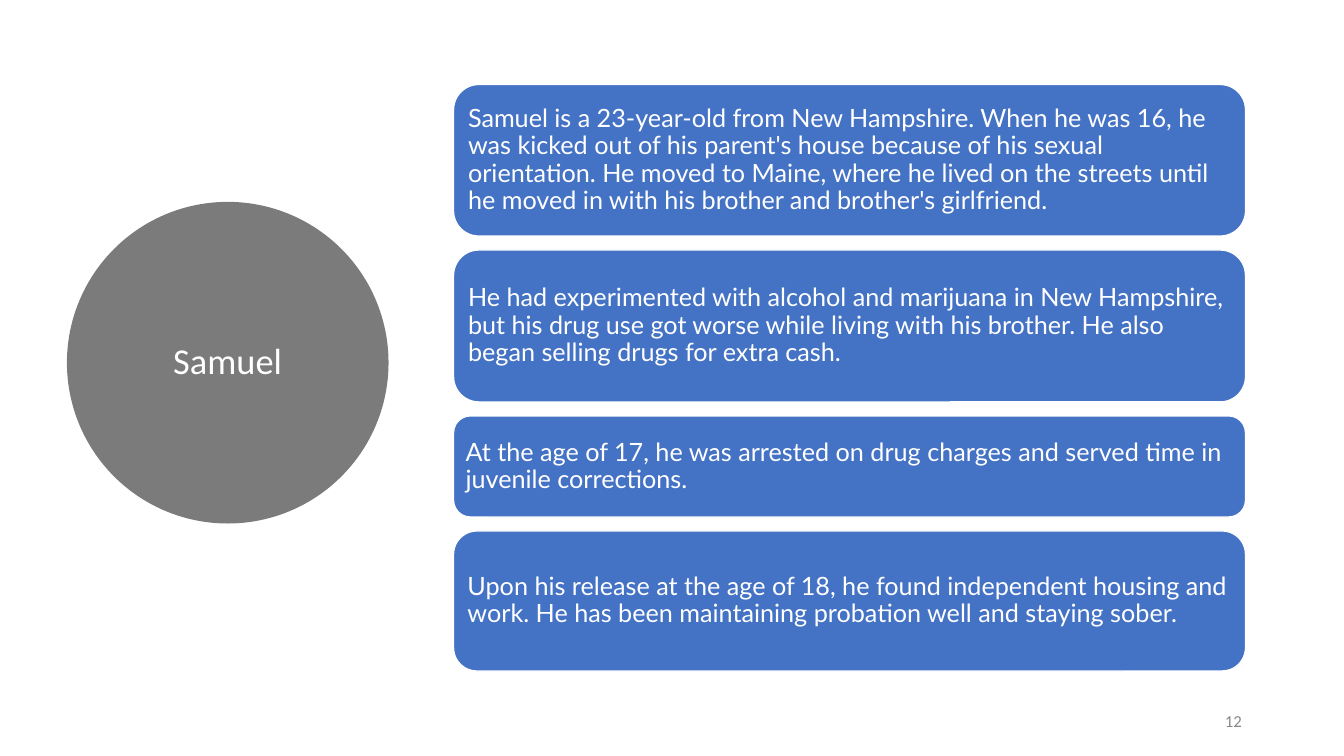
from dataclasses import dataclass

from pptx import Presentation
from pptx import util as u
from pptx.dml.color import RGBColor
from pptx.enum import shapes, text


@dataclass(frozen=True)
class Theme:
    blue: str = "4472C4"
    gray: str = "7B7B7B"
    white: str = "FFFFFF"
    muted: str = "898989"
    head_font: str = "Calibri"
    body_font: str = "Lato"
    name_size: int = 26
    body_size: int = 18
    number_size: int = 12


class SlideBuilder:
    def __init__(self, slide, theme):
        self.s = slide
        self.theme = theme

    def set_text(self, sp, words, font, size, color, align, inset=None, spacing=0.9):
        tf = sp.text_frame
        frame = {"word_wrap": True, "vertical_anchor": text.MSO_ANCHOR.MIDDLE}
        if inset is not None:
            for side in ("left", "top", "right", "bottom"):
                frame[f"margin_{side}"] = u.Cm(inset)
        p = tf.paragraphs[0]
        r = p.add_run()
        r.text = words
        formats = (
            (tf, frame),
            (p, {"alignment": align, "line_spacing": spacing}),
            (r.font, {"name": font, "size": u.Pt(size)}),
        )
        for target, values in formats:
            for key, value in values.items():
                setattr(target, key, value)
        r.font.color.rgb = RGBColor.from_string(color)

    def shape(self, kind, box, fill, line, width):
        sp = self.s.shapes.add_shape(kind, *map(u.Cm, box))
        sp.shadow.inherit = False
        sp.fill.solid()
        sp.fill.fore_color.rgb = RGBColor.from_string(fill)
        sp.line.color.rgb = RGBColor.from_string(line)
        sp.line.width = u.Pt(width)
        return sp

    def name_circle(self, box, name):
        t = self.theme
        sp = self.shape(shapes.MSO_SHAPE.OVAL, box, t.gray, t.gray, 13.75)
        self.set_text(sp, name, t.head_font, t.name_size, t.white,
                      text.PP_ALIGN.CENTER)

    def card(self, box, words):
        t = self.theme
        sp = self.shape(shapes.MSO_SHAPE.ROUNDED_RECTANGLE, box, t.blue, t.white, 1)
        self.set_text(sp, words, t.body_font, t.body_size, t.white,
                      text.PP_ALIGN.LEFT, inset=0.18)

    def slide_number(self, box, number):
        t = self.theme
        sp = self.s.shapes.add_textbox(*map(u.Cm, box))
        self.set_text(sp, number, t.head_font, t.number_size, t.muted,
                      text.PP_ALIGN.RIGHT, spacing=1.0)


CARDS = (
    (3.82, "Samuel is a 23-year-old from New Hampshire. When he was 16, he was kicked "
           "out of his parent's house because of his sexual orientation. He moved to "
           "Maine, where he lived on the streets until he moved in with his brother "
           "and brother's girlfriend."),
    (3.83, "He had experimented with alcohol and marijuana in New Hampshire, but his "
           "drug use got worse while living with his brother. He also began selling "
           "drugs for extra cash."),
    (2.55, "At the age of 17, he was arrested on drug charges and served time in "
           "juvenile corrections."),
    (3.53, "Upon his release at the age of 18, he found independent housing and work. "
           "He has been maintaining probation well and staying sober."),
)
CARD_LEFT, CARD_TOP, CARD_WIDTH, CARD_GAP = 11.43, 2.13, 19.96, 0.35


def main():
    prs = Presentation()
    prs.slide_width, prs.slide_height = u.Cm(33.87), u.Cm(19.05)
    builder = SlideBuilder(prs.slides.add_slide(prs.slide_layouts[6]), Theme())
    builder.name_circle((1.93, 5.33, 7.62, 7.62), "Samuel")
    top = CARD_TOP
    for height, words in CARDS:
        builder.card((CARD_LEFT, top, CARD_WIDTH, height), words)
        top += height + CARD_GAP
    builder.slide_number((23.93, 17.65, 7.62, 1.02), "12")
    prs.save("out.pptx")


if __name__ == "__main__":
    main()
